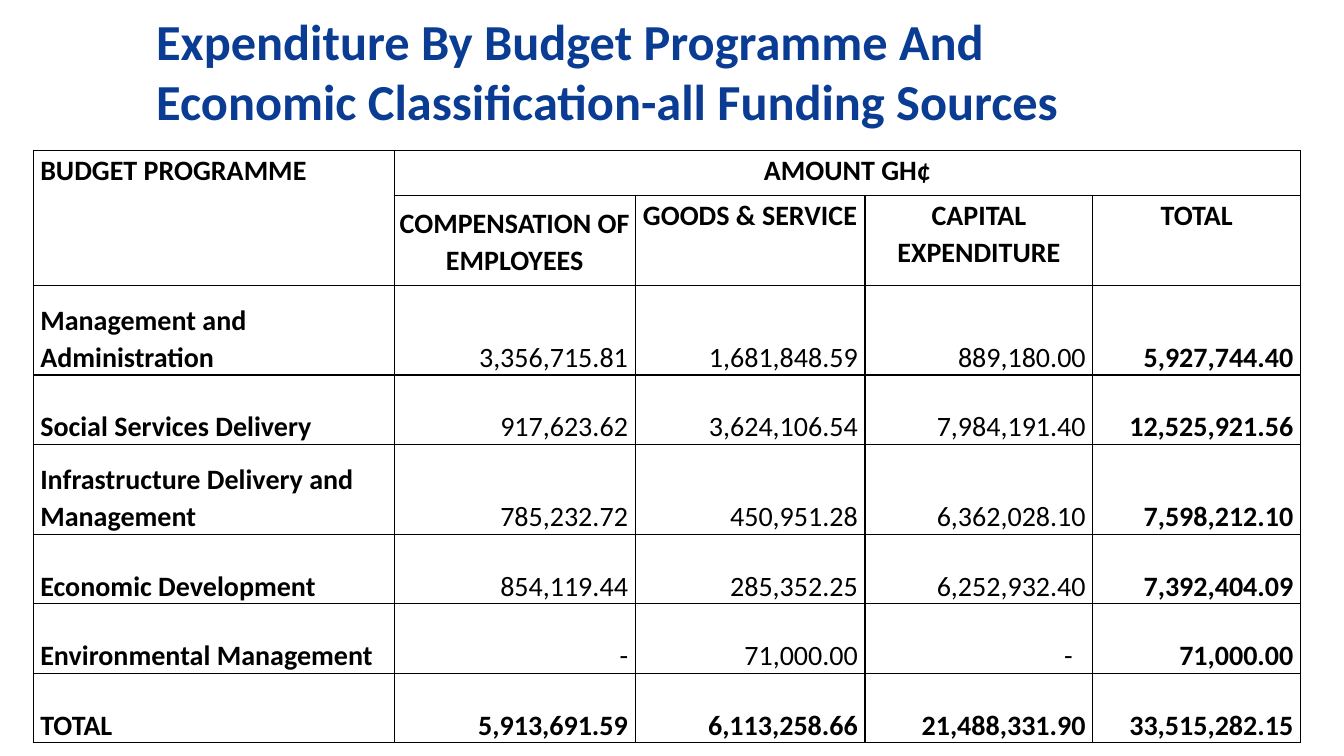
import pptx
import pptx.dml.color
import pptx.enum.text
import pptx.oxml
import pptx.oxml.ns
import pptx.util
from dataclasses import dataclass

Inches, Pt = pptx.util.Inches, pptx.util.Pt
ALIGN = pptx.enum.text.PP_ALIGN
ANCHOR = pptx.enum.text.MSO_ANCHOR


@dataclass(frozen=True)
class Theme:
    font: str = "Calibri"
    heading: str = "093C92"
    ink: str = "000000"
    paper: str = "FFFFFF"
    heading_size: int = 36
    body_size: int = 20
    border_width: int = 1


class BudgetSlide:
    def __init__(self, deck, theme):
        self.theme = theme
        self.slide = deck.slides.add_slide(deck.slide_layouts[6])
        background = self.slide.background.fill
        background.solid()
        background.fore_color.rgb = pptx.dml.color.RGBColor.from_string(theme.paper)

    def add_words(self, frame, words, size, color, bold=True, align=ALIGN.LEFT):
        """Put one styled run in the first paragraph of a text frame."""
        frame.word_wrap = True
        paragraph = frame.paragraphs[0]
        paragraph.alignment = align
        run = paragraph.add_run()
        run.text = words
        run.font.name = self.theme.font
        run.font.size = Pt(size)
        run.font.bold = bold
        run.font.color.rgb = pptx.dml.color.RGBColor.from_string(color)
        return paragraph

    def title(self, words, left, top, width, height):
        box = self.slide.shapes.add_textbox(
            Inches(left), Inches(top), Inches(width), Inches(height))
        frame = box.text_frame
        frame.margin_left = frame.margin_right = Inches(0.1)
        frame.margin_top = frame.margin_bottom = Inches(0.1)
        self.add_words(frame, words, self.theme.heading_size, self.theme.heading)

    def table(self, left, top, widths, heights):
        grid = self.slide.shapes.add_table(
            len(heights), len(widths), Inches(left), Inches(top),
            Inches(sum(widths)), Inches(sum(heights))).table
        grid.first_row = grid.horz_banding = False
        for column, width in zip(grid.columns, widths):
            column.width = Inches(width)
        for row, height in zip(grid.rows, heights):
            row.height = Inches(height)
        for cell in grid.iter_cells():
            cell.fill.background()
            self.border(cell)
        return grid

    def border(self, cell):
        properties = cell._tc.get_or_add_tcPr()
        namespace = pptx.oxml.ns.nsdecls("a")
        for place, side in enumerate(("lnL", "lnR", "lnT", "lnB")):
            properties.insert(place, pptx.oxml.parse_xml(
                f'<a:{side} {namespace} w="{Pt(self.theme.border_width)}"><a:solidFill>'
                f'<a:srgbClr val="{self.theme.ink}"/></a:solidFill></a:{side}>'))

    def cell(self, cell, words, align, anchor, bold=True, side=0.07, right=None):
        cell.margin_left = Inches(side)
        cell.margin_right = Inches(side if right is None else right)
        cell.margin_top, cell.margin_bottom = Inches(0.01), Inches(0)
        cell.vertical_anchor = anchor
        return self.add_words(cell.text_frame, words, self.theme.body_size,
                              self.theme.ink, bold, align)

    def label(self, cell, words, align=ALIGN.LEFT, anchor=ANCHOR.TOP, side=0.07):
        paragraph = self.cell(cell, words, align, anchor, side=side)
        paragraph.line_spacing = 1.07
        paragraph.space_after = Pt(8)

    def amount(self, cell, words, bold, right=0.07):
        self.cell(cell, words, ALIGN.RIGHT, ANCHOR.BOTTOM, bold, side=0.01, right=right)


COLUMN_HEADS = ["COMPENSATION OF EMPLOYEES", "GOODS & SERVICE",
                "CAPITAL EXPENDITURE", "TOTAL"]
PROGRAMMES = [
    ("Management and Administration",
     "3,356,715.81", "1,681,848.59", "889,180.00", "5,927,744.40"),
    ("Social Services Delivery",
     "917,623.62", "3,624,106.54", "7,984,191.40", "12,525,921.56"),
    ("Infrastructure Delivery and Management",
     "785,232.72", "450,951.28", "6,362,028.10", "7,598,212.10"),
    ("Economic Development",
     "854,119.44", "285,352.25", "6,252,932.40", "7,392,404.09"),
    ("Environmental Management", "-", "71,000.00", "-", "71,000.00"),
    ("TOTAL",
     "5,913,691.59", "6,113,258.66", "21,488,331.90", "33,515,282.15"),
]
CAPITAL, TOTAL = 3, 4


def main():
    deck = pptx.Presentation()
    deck.slide_width, deck.slide_height = Inches(13.33), Inches(7.5)
    page = BudgetSlide(deck, Theme())

    # Title
    page.title("Expenditure By Budget Programme And Economic "
               "Classification-all Funding Sources", 1.45, 0, 10.22, 1.62)

    # Table grid
    budget = page.table(0.33, 1.49, [3.58, 2.39, 2.28, 2.26, 2.06],
                        [0.45, 0.89, 0.89, 0.69, 0.89, 0.69, 0.69, 0.69])

    # Two-level header
    budget.cell(0, 0).merge(budget.cell(1, 0))
    budget.cell(0, 1).merge(budget.cell(0, TOTAL))
    page.label(budget.cell(0, 0), "BUDGET PROGRAMME")
    page.label(budget.cell(0, 1), "AMOUNT GH¢", ALIGN.CENTER)
    for column, head in enumerate(COLUMN_HEADS, start=1):
        first = column == 1
        page.label(budget.cell(1, column), head, ALIGN.CENTER,
                   ANCHOR.MIDDLE if first else ANCHOR.TOP, 0 if first else 0.07)

    # Programme rows; the total row and total column are bold
    for row, (programme, *amounts) in enumerate(PROGRAMMES, start=2):
        page.label(budget.cell(row, 0), programme, anchor=ANCHOR.BOTTOM)
        for column, amount in enumerate(amounts, start=1):
            bold = programme == "TOTAL" or column == TOTAL
            empty_capital = column == CAPITAL and amount == "-"
            page.amount(budget.cell(row, column), amount, bold,
                        0.2 if empty_capital else 0.07)

    deck.save("out.pptx")


if __name__ == "__main__":
    main()
